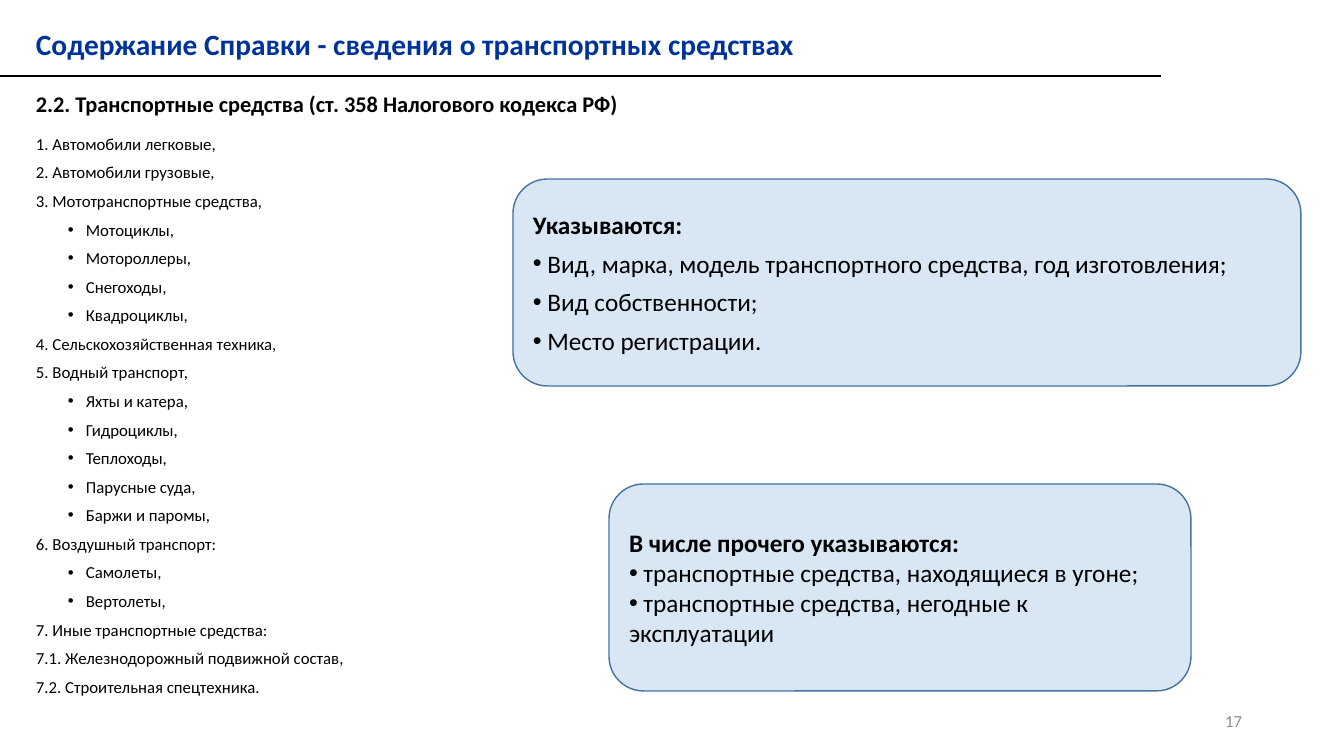
from pptx import Presentation, util as u
from pptx.dml.color import RGBColor
from pptx.enum import shapes, text
from pptx.oxml.ns import qn
from lxml import etree

BLUE = RGBColor(0x00, 0x33, 0x99)
BLACK = RGBColor(0, 0, 0)
GRAY = RGBColor(0x8C, 0x8C, 0x8C)
FILL = RGBColor(0x5B, 0x9B, 0xD5)
EDGE = RGBColor(0x43, 0x73, 0x9E)
FONT = "Calibri"
PX = 914400 / 100.8

TITLE = "Содержание Справки - сведения о транспортных средствах"
HEAD = "2.2. Транспортные средства (ст. 358 Налогового кодекса РФ)"
PAGE = "17"
KINDS = [
    ("1. Автомобили легковые,", []),
    ("2. Автомобили грузовые,", []),
    ("3. Мототранспортные средства,",
     ["Мотоциклы,", "Мотороллеры,", "Снегоходы,", "Квадроциклы,"]),
    ("4. Сельскохозяйственная техника,", []),
    ("5. Водный транспорт,",
     ["Яхты и катера,", "Гидроциклы,", "Теплоходы,", "Парусные суда,",
      "Баржи и паромы,"]),
    ("6. Воздушный транспорт:", ["Самолеты,", "Вертолеты,"]),
    ("7. Иные транспортные средства:", []),
    ("7.1. Железнодорожный подвижной состав,", []),
    ("7.2. Строительная спецтехника.", []),
]
LEFT, JUST = text.PP_ALIGN.LEFT, text.PP_ALIGN.JUSTIFY
PANELS = [
    ((609, 484, 582, 207), "В числе прочего указываются:",
     ["транспортные средства, находящиеся в угоне;",
      "транспортные средства, негодные к эксплуатации"], 0, LEFT),
    ((513, 179, 788, 207), "Указываются:",
     ["Вид, марка, модель транспортного средства, год изготовления;",
      "Вид собственности;", "Место регистрации."], 6, JUST),
]


def px(*vals):
    return [u.Emu(round(v * PX)) for v in vals]


def write(frame, line, size, color=BLACK, bold=False, align=LEFT, after=0):
    para = frame.paragraphs[0]
    if para.text:
        para = frame.add_paragraph()
    para.text = line
    para.alignment = align
    para.space_after = u.Pt(after)
    font = para.font
    font.name, font.size, font.bold = FONT, u.Pt(size), bold
    font.color.rgb = color
    return para


def bullet(para, left=0, hang=0):
    props = para._p.get_or_add_pPr()
    props.set("marL", str(px(left)[0]))
    props.set("indent", str(px(-hang)[0]))
    face = etree.Element(qn("a:buFont"), typeface="Arial")
    mark = etree.Element(qn("a:buChar"), char="•")
    spot = props.find(qn("a:defRPr"))
    for node in (face, mark):
        spot.addprevious(node)


def label(box, wrap=True):
    frame = slide.shapes.add_textbox(*px(*box)).text_frame
    frame.word_wrap = wrap
    return frame


def panel(box, head, items, gap, align):
    card = slide.shapes.add_shape(shapes.MSO_SHAPE.ROUNDED_RECTANGLE, *px(*box))
    card.shadow.inherit = False
    card.fill.solid()
    card.fill.fore_color.rgb = FILL
    tint = card._element.spPr.find(qn("a:solidFill"))[0]
    etree.SubElement(tint, qn("a:alpha"), val="23000")
    card.line.color.rgb = EDGE
    card.line.width = u.Pt(1)
    frame = card.text_frame
    frame.word_wrap = True
    frame.vertical_anchor = text.MSO_ANCHOR.MIDDLE
    write(frame, head, 18, bold=True, align=JUST, after=gap)
    for item in items:
        bullet(write(frame, " " + item, 18, align=align, after=gap))


deck = Presentation()
deck.slide_width, deck.slide_height = px(1344, 756)
slide = deck.slides.add_slide(deck.slide_layouts[6])

page = label((950, 701, 302, 40))
page.vertical_anchor = text.MSO_ANCHOR.MIDDLE
write(page, PAGE, 12, GRAY, align=text.PP_ALIGN.RIGHT)
write(label((26, 21, 785, 45), False), TITLE, 21, BLUE, True)

body = label((26, 85, 1270, 713))
write(body, HEAD, 16, bold=True, align=JUST, after=12)
for kind, subs in KINDS:
    write(body, kind, 12, after=6)
    for sub in subs:
        para = write(body, sub, 12, after=6)
        para.level = 1
        bullet(para, 50, 18)

for row in PANELS:
    panel(*row)

rule = slide.shapes.add_connector(shapes.MSO_CONNECTOR.STRAIGHT, *px(0, 76, 1161, 76))
rule.line.color.rgb = BLACK
rule.line.width = u.Pt(1.5)
etree.SubElement(rule._element.spPr, qn("a:effectLst"))

deck.save("out.pptx")
